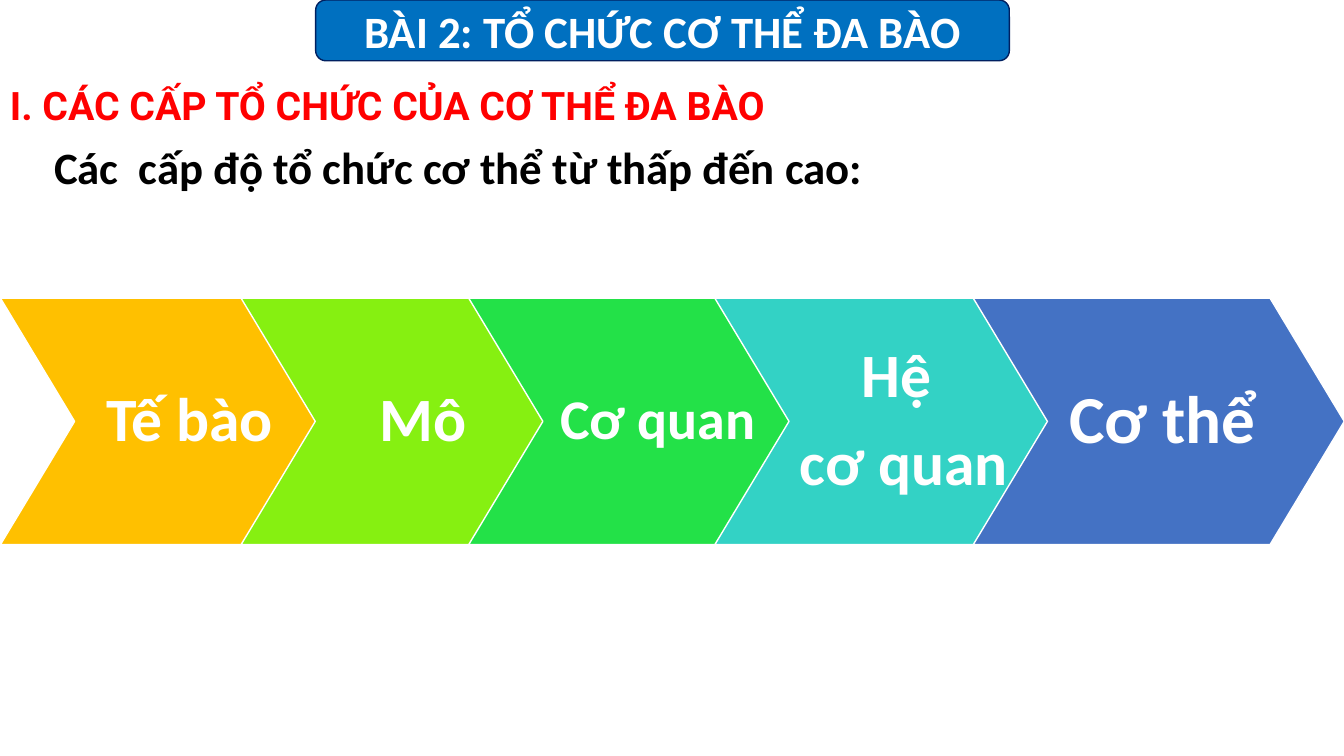
from dataclasses import dataclass

from lxml.etree import SubElement
from pptx import Presentation
from pptx.dml.color import RGBColor
from pptx.enum.shapes import MSO_SHAPE
from pptx.enum.text import MSO_ANCHOR, MSO_AUTO_SIZE, PP_ALIGN
from pptx.oxml.ns import qn
from pptx.shapes.autoshape import Shape
from pptx.slide import Slide
from pptx.text.text import TextFrame, _Paragraph
from pptx.util import Pt

COLOURS = {
    "white": "FFFFFF",
    "black": "000000",
    "red": "FF0000",
    "blue": "0070C0",
    "navy": "002060",
    "amber": "FFC000",
    "lime": "86F011",
    "green": "23E148",
    "teal": "33D2C5",
    "indigo": "4472C4",
}
CHEVRON_TOP, CHEVRON_WIDTH, CHEVRON_HEIGHT, CHEVRON_POINT = 213, 265, 176, 53


@dataclass(frozen=True)
class Heading:
    text: str
    left: float
    top: float
    width: float
    height: float
    font: str
    size: float
    colour: str


@dataclass(frozen=True)
class Level:
    lines: tuple[str, ...]
    left: float
    size: float
    colour: str


HEADINGS = (
    Heading("I. CÁC CẤP TỔ CHỨC CỦA CƠ THỂ ĐA BÀO", 0, 54.7, 629, 41, "Roboto", 28, "red"),
    Heading("Các  cấp độ tổ chức cơ thể từ thấp đến cao:", 31.5, 96.5, 713.5, 46, "Calibri", 32, "black"),
)
LEVELS = (
    Level(("Tế bào",), 0.3, 44, "amber"),
    Level(("Mô ",), 172.2, 44, "lime"),
    Level(("Cơ quan",), 334.8, 40, "green"),
    Level(("Hệ ", "cơ quan"), 510.6, 44, "teal"),
    Level(("Cơ thể",), 695.2, 48, "indigo"),
)


def rgb(name: str) -> RGBColor:
    return RGBColor.from_string(COLOURS[name])


def add_span(para: _Paragraph, text: str, font: str, size: float, colour: str) -> None:
    span = para.add_run()
    span.text = text
    span.font.name = font
    span.font.size = Pt(size)
    span.font.bold = True
    span.font.color.rgb = rgb(colour)
    for tag in ("a:ea", "a:cs"):
        SubElement(span.font._element, qn(tag), typeface=font)


def set_margins(frame: TextFrame, left: float, top: float, right: float, bottom: float) -> None:
    frame.margin_left, frame.margin_top = Pt(left), Pt(top)
    frame.margin_right, frame.margin_bottom = Pt(right), Pt(bottom)


def paint(shape: Shape, fill: str, line: str) -> None:
    shape.shadow.inherit = False
    shape.fill.solid()
    shape.fill.fore_color.rgb = rgb(fill)
    shape.line.color.rgb = rgb(line)
    shape.line.width = Pt(1)
    shape.text_frame.word_wrap = True
    shape.text_frame.vertical_anchor = MSO_ANCHOR.MIDDLE


def draw_banner(page: Slide, text: str) -> None:
    banner = page.shapes.add_shape(MSO_SHAPE.ROUNDED_RECTANGLE, Pt(225.5), Pt(0), Pt(495.5), Pt(43.4))
    paint(banner, "blue", "navy")
    para = banner.text_frame.paragraphs[0]
    para.alignment = PP_ALIGN.CENTER
    add_span(para, text, "Calibri", 32, "white")


def draw_heading(page: Slide, heading: Heading) -> None:
    box = page.shapes.add_textbox(Pt(heading.left), Pt(heading.top), Pt(heading.width), Pt(heading.height))
    frame = box.text_frame
    frame.word_wrap = True
    frame.auto_size = MSO_AUTO_SIZE.SHAPE_TO_FIT_TEXT
    add_span(frame.paragraphs[0], heading.text, heading.font, heading.size, heading.colour)


def draw_level(page: Slide, level: Level) -> None:
    left, right = level.left, level.left + CHEVRON_WIDTH
    middle, bottom = CHEVRON_TOP + CHEVRON_HEIGHT / 2, CHEVRON_TOP + CHEVRON_HEIGHT
    outline = (
        (right - CHEVRON_POINT, CHEVRON_TOP),
        (right, middle),
        (right - CHEVRON_POINT, bottom),
        (left, bottom),
        (left + CHEVRON_POINT, middle),
    )
    builder = page.shapes.build_freeform(Pt(left), Pt(CHEVRON_TOP))
    builder.add_line_segments([(Pt(x), Pt(y)) for x, y in outline], close=True)
    chevron = builder.convert_to_shape()
    paint(chevron, level.colour, "white")
    frame = chevron.text_frame
    set_margins(frame, 35.3, 2, 30.2, 2)
    for index, line in enumerate(level.lines):
        para = frame.add_paragraph() if index else frame.paragraphs[0]
        para.alignment = PP_ALIGN.CENTER
        para.line_spacing = 0.9
        para.space_after = Pt(0.35 * level.size)
        add_span(para, line, "Calibri", level.size, "white")


def main() -> None:
    deck = Presentation()
    deck.slide_width, deck.slide_height = Pt(960), Pt(540)
    page = deck.slides.add_slide(deck.slide_layouts[6])
    draw_banner(page, "BÀI 2: TỔ CHỨC CƠ THỂ ĐA BÀO")
    for heading in HEADINGS:
        draw_heading(page, heading)
    for level in LEVELS:
        draw_level(page, level)
    deck.save("out.pptx")


if __name__ == "__main__":
    main()
